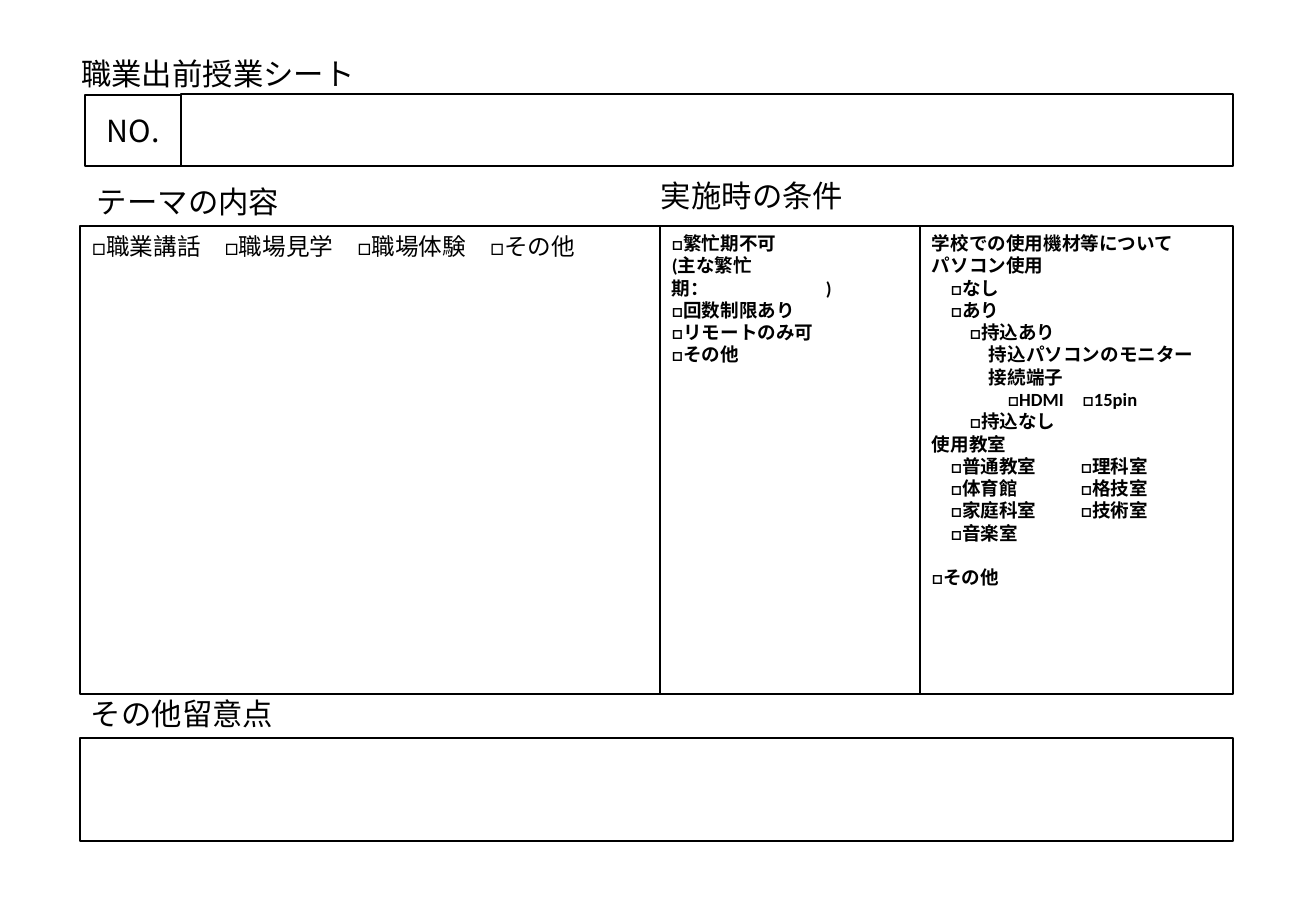
import dataclasses

import pptx
import pptx.dml.color
import pptx.enum.shapes
import pptx.enum.text
import pptx.oxml
import pptx.oxml.ns
import pptx.util

SCALE = 914400 / 121.5
ANCHOR = pptx.enum.text.MSO_ANCHOR
ALIGN = pptx.enum.text.PP_ALIGN


@dataclasses.dataclass(frozen=True)
class Theme:
    ink: pptx.dml.color.RGBColor = pptx.dml.color.RGBColor(0, 0, 0)
    heading_font: str = "Noto Sans CJK JP"
    body_font: str = "Calibri"
    heading: int = 18
    choice: int = 14
    detail: int = 11
    line: int = 1
    gap: int = 13


THEME = Theme()
LEFT, RIGHT = 80, 1233
INDENT = 19
FORM_TOP, FORM_HEIGHT = 226, 468
CONDITIONS_LEFT, EQUIPMENT_LEFT = 660, 920
ROOM_TABS = (INDENT, 149)
BUSY_TABS = (154,)

HEADINGS = [
    ("実施時の条件", 649, 171),
    ("テーマの内容", 85, 177),
    ("その他留意点", 79, 689),
]
CHOICES = "□職業講話　□職場見学　□職場体験　□その他"
CONDITIONS = [
    ("□繁忙期不可", 0, ()),
    ("(主な繁忙\v期：\t)", 0, BUSY_TABS),
    ("□回数制限あり", 0, ()),
    ("□リモートのみ可", 0, ()),
    ("□その他", 0, ()),
]
EQUIPMENT = [
    ("学校での使用機材等について", 0, ()),
    ("パソコン使用", 0, ()),
    ("□なし", 1, ()),
    ("□あり", 1, ()),
    ("□持込あり", 2, ()),
    ("持込パソコンのモニター", 3, ()),
    ("接続端子", 3, ()),
    ("□HDMI　□15pin", 4, ()),
    ("□持込なし", 2, ()),
    ("使用教室", 0, ()),
    ("\t□普通教室\t□理科室", 0, ROOM_TABS),
    ("\t□体育館\t□格技室", 0, ROOM_TABS),
    ("\t□家庭科室\t□技術室", 0, ROOM_TABS),
    ("\t□音楽室", 0, ROOM_TABS),
    ("□その他", 0, ()),
]


def px(n):
    return pptx.util.Emu(round(n * SCALE))


def sub(parent, tag, **attributes):
    child = pptx.oxml.parse_xml(f"<a:{tag} {pptx.oxml.ns.nsdecls('a')}/>")
    for name, value in attributes.items():
        child.set(name, str(value))
    parent.append(child)
    return child


def write(p, text, font, size, bold=False, align=ALIGN.LEFT):
    p.text = text
    p.alignment = align
    for r in p.runs:
        r.font.name = font
        r.font.size = pptx.util.Pt(size)
        r.font.bold = bold
        r.font.color.rgb = THEME.ink
        sub(r.font._element, "ea", typeface=font)
    for br in p._p.findall(pptx.oxml.ns.qn("a:br")):
        sub(br, "rPr", sz=size * 100)


def add_box(s, left, top, width, height, anchor=ANCHOR.TOP):
    sp = s.shapes.add_shape(
        pptx.enum.shapes.MSO_SHAPE.RECTANGLE, px(left), px(top), px(width), px(height)
    )
    sp.shadow.inherit = False
    sp.fill.background()
    sp.line.color.rgb = THEME.ink
    sp.line.width = pptx.util.Pt(THEME.line)
    sp.text_frame.word_wrap = True
    sp.text_frame.vertical_anchor = anchor
    return sp


def add_heading(s, text, left, top):
    sp = s.shapes.add_textbox(px(left), px(top), px(407), px(49))
    sp.text_frame.word_wrap = True
    write(sp.text_frame.paragraphs[0], text, THEME.heading_font, THEME.heading)


def set_title(s, text):
    sp = s.shapes.title
    sp.left, sp.top, sp.width, sp.height = px(69), px(49), px(407), px(49)
    sp.text_frame.vertical_anchor = ANCHOR.TOP
    sp.text_frame.auto_size = pptx.enum.text.MSO_AUTO_SIZE.NONE
    write(sp.text_frame.paragraphs[0], text, THEME.heading_font, THEME.heading)


def fill_list(tf, items):
    for i, (text, level, tabs) in enumerate(items):
        p = tf.add_paragraph() if i else tf.paragraphs[0]
        write(p, text, THEME.body_font, THEME.detail, bold=True)
        pPr = p._p.get_or_add_pPr()
        pPr.set("marL", str(px(level * INDENT)))
        if tabs:
            stops = sub(pPr, "tabLst")
            for tab in tabs:
                sub(stops, "tab", pos=px(tab), algn="l")


def main():
    prs = pptx.Presentation()
    prs.slide_width, prs.slide_height = px(1316), px(911)
    s = prs.slides.add_slide(prs.slide_layouts[5])
    set_title(s, "職業出前授業シート")
    for heading in HEADINGS:
        add_heading(s, *heading)

    add_box(s, 181, 94, RIGHT - 181, 72)
    number = add_box(s, 85, 95, 96, 71, ANCHOR.MIDDLE)
    write(number.text_frame.paragraphs[0], "NO.", THEME.heading_font,
          THEME.heading, align=ALIGN.CENTER)

    edges = (LEFT, CONDITIONS_LEFT, EQUIPMENT_LEFT, RIGHT)
    content, conditions, equipment = [
        add_box(s, left, FORM_TOP, right - left, FORM_HEIGHT).text_frame
        for left, right in zip(edges, edges[1:])
    ]
    write(content.paragraphs[0], CHOICES, THEME.body_font, THEME.choice)
    fill_list(conditions, CONDITIONS)
    fill_list(equipment, EQUIPMENT)
    equipment.paragraphs[-1].space_before = pptx.util.Pt(THEME.gap)

    add_box(s, LEFT, 738, RIGHT - LEFT, 103)
    prs.save("out.pptx")


if __name__ == "__main__":
    main()
